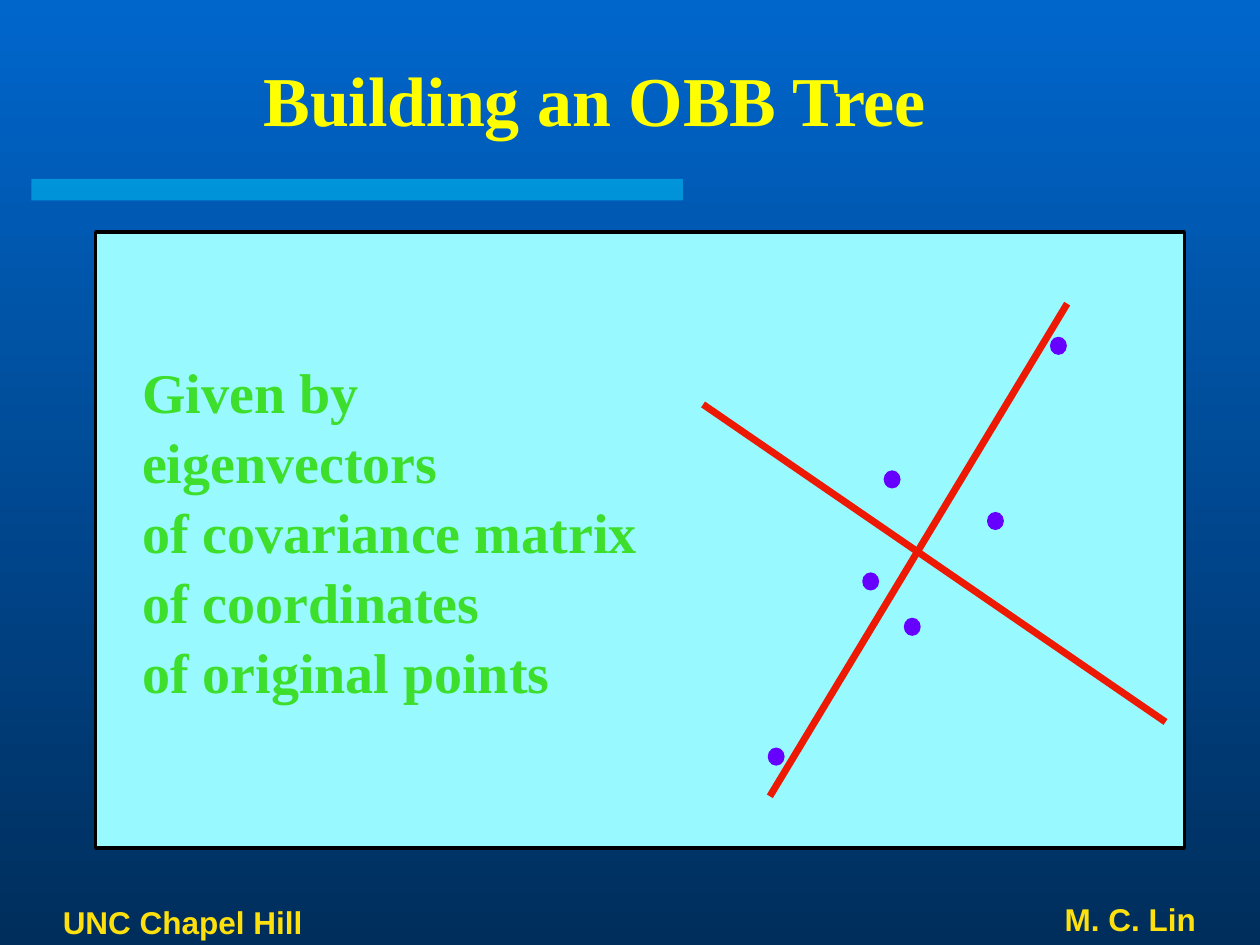
from lxml.etree import SubElement
from pptx import Presentation
from pptx.dml.color import RGBColor
from pptx.enum.shapes import MSO_CONNECTOR as Connector, MSO_SHAPE as Shape
from pptx.enum.text import MSO_ANCHOR as Anchor, PP_ALIGN as Align
from pptx.oxml.ns import qn
from pptx.util import Inches, Pt

COLUMNS, ROWS = 100, 75
CELL = Inches(0.1)
COLORS = {
    "sky": "0066CC", "deep": "002E5C", "bar": "00CCFF", "panel": "98FAFF",
    "border": "000000", "point": "6600FF", "axis": "ED1903",
    "title": "FFFF00", "body": "3DDE2C", "footer": "FDE00D",
}
TITLE = {"name": "Times New Roman", "size": Pt(40), "bold": True}
BODY = {"name": "Times New Roman", "size": Pt(32), "bold": True}
FOOTER = {"name": "Arial", "size": Pt(18), "bold": True}
EXPLANATION = [
    "Given by eigenvectors", "of covariance matrix",
    "of coordinates", "of original points",
]
POINTS = [(83.4, 26.8), (70.2, 37.4), (78.4, 40.7),
          (68.5, 45.5), (71.8, 49.1), (61, 59.4)]
POINT_SIZE = (1.2, 1.3)
AXES = [(92.5, 57.3, 55.8, 32.1), (84.7, 24.1, 61.1, 63.2)]


def color(name):
    """Return the palette colour of that name."""
    return RGBColor.from_string(COLORS[name])


def grid(*cells):
    """Turn columns and rows into lengths."""
    return [round(cell * CELL) for cell in cells]


def paint_background(slide):
    """Fill the slide with a gradient that darkens downwards."""
    fill = slide.background.fill
    fill.gradient()
    fill.gradient_angle = 270
    for stop, name, position in zip(fill.gradient_stops, ("sky", "deep"), (0, 1)):
        stop.color.rgb = color(name)
        stop.position = position


def write(frame, lines, font_format, color_name, align=Align.LEFT, spacing=1.0):
    """Write one formatted paragraph per line."""
    for index, line in enumerate(lines):
        paragraph = frame.add_paragraph() if index else frame.paragraphs[0]
        paragraph.text = line
        paragraph.alignment = align
        paragraph.line_spacing = spacing
        for attribute, value in font_format.items():
            setattr(paragraph.font, attribute, value)
        paragraph.font.color.rgb = color(color_name)


def add_text(shapes, box, *content, anchor=Anchor.TOP, **layout):
    """Add a wrapping text box."""
    frame = shapes.add_textbox(*grid(*box)).text_frame
    frame.word_wrap = True
    frame.vertical_anchor = anchor
    write(frame, *content, **layout)


def add_shape(shapes, kind, box, fill, line=None, width=1):
    """Add a filled preset shape, outlined if a line colour is given."""
    shape = shapes.add_shape(kind, *grid(*box))
    shape.shadow.inherit = False
    shape.fill.solid()
    shape.fill.fore_color.rgb = color(fill)
    if line:
        shape.line.color.rgb = color(line)
        shape.line.width = Pt(width)
    else:
        shape.line.fill.background()
    return shape


def add_bar(shapes):
    """Add the half-transparent bar under the title."""
    bar = add_shape(shapes, Shape.RECTANGLE, (2.5, 14.2, 51.7, 1.7), "bar")
    fill_color = bar.fill._xPr.find(qn("a:solidFill"))[0]
    SubElement(fill_color, qn("a:alpha"), val="50000")


def add_axis(shapes, ends):
    """Add one straight eigenvector axis."""
    axis = shapes.add_connector(Connector.STRAIGHT, *grid(*ends))
    axis.line.color.rgb = color("axis")
    axis.line.width = Pt(4)
    SubElement(axis._element.spPr, qn("a:effectLst"))


def add_diagram(slide):
    """Add the panel with its explanation, points and axes."""
    shapes = slide.shapes.add_group_shape().shapes
    add_shape(shapes, Shape.RECTANGLE, (7.6, 18.4, 86.4, 48.9), "panel", "border", 2)
    add_text(shapes, (10.3, 27.7, 42.5, 28), EXPLANATION, BODY, "body", spacing=1.04)
    for corner in POINTS:
        add_shape(shapes, Shape.OVAL, corner + POINT_SIZE, "point", "point")
    for ends in AXES:
        add_axis(shapes, ends)


def set_title(slide, text):
    """Place and format the title placeholder."""
    title = slide.shapes.title
    title.left, title.top, title.width, title.height = grid(2.9, 3.2, 88.6, 9.3)
    title.text_frame.vertical_anchor = Anchor.MIDDLE
    write(title.text_frame, [text], TITLE, "title", Align.CENTER)


def main():
    """Build the slide and save it."""
    presentation = Presentation()
    presentation.slide_width, presentation.slide_height = grid(COLUMNS, ROWS)
    slide = presentation.slides.add_slide(presentation.slide_layouts[5])
    paint_background(slide)
    set_title(slide, "Building an OBB Tree")
    add_bar(slide.shapes)
    add_text(slide.shapes, (4, 71.4, 22, 3.6), ["UNC Chapel Hill"],
             FOOTER, "footer", anchor=Anchor.MIDDLE)
    add_text(slide.shapes, (52.2, 70.9, 43.7, 4.1), ["M. C. Lin"],
             FOOTER, "footer", anchor=Anchor.MIDDLE, align=Align.RIGHT)
    add_diagram(slide)
    presentation.save("out.pptx")


if __name__ == "__main__":
    main()
